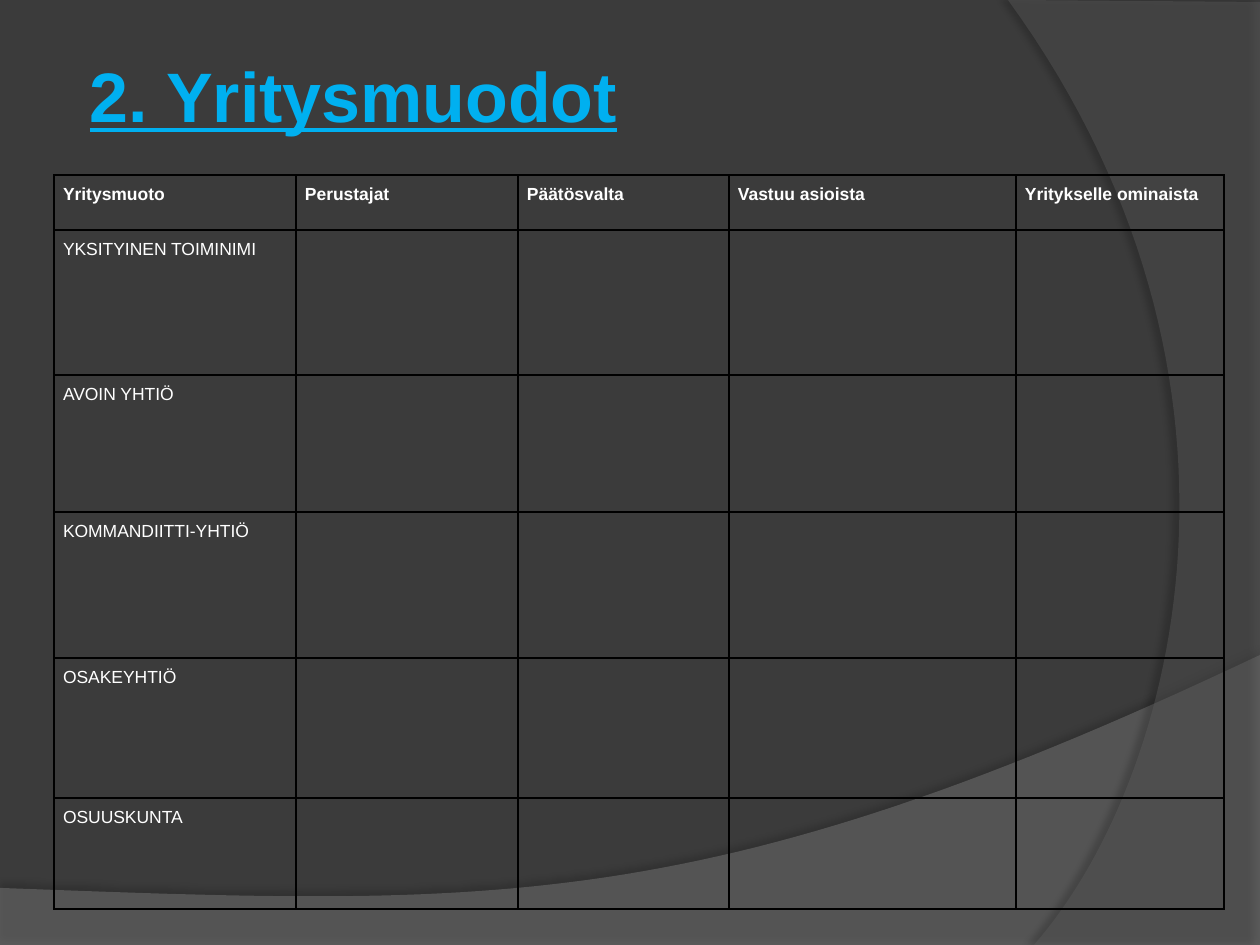
from lxml.etree import SubElement
from pptx import Presentation
from pptx.dml.color import RGBColor
from pptx.enum.text import MSO_ANCHOR
from pptx.oxml.ns import qn
from pptx.util import Emu, Pt

# Content
TITLE = "2. Yritysmuodot"
HEADERS = ["Yritysmuoto", "Perustajat", "Päätösvalta", "Vastuu asioista",
           "Yritykselle ominaista"]
COMPANY_FORMS = ["YKSITYINEN TOIMINIMI", "AVOIN YHTIÖ", "KOMMANDIITTI-YHTIÖ",
                 "OSAKEYHTIÖ", "OSUUSKUNTA"]

# Layout in px
SLIDE = (1260, 945)
TITLE_BOX = (84, 16, 1071, 157)
TITLE_INSET = 6
TABLE_AT = (54, 175)
COLS = [242, 222, 211, 287, 208]
ROWS = [55, 145, 137, 146, 140, 111]
CELL_INSET = 9

# Background waves: straight corners, then one Bezier curve from the last corner
WAVES = [
    dict(corners=[(0, 888), (0, 946), (1260, 946), (1260, 655)],
         curve=[(704, 919), (493, 906), (0, 888)],
         fill="wave_low", alpha=45, shadow=(35, 4, 3.5, 270)),
    dict(corners=[(1260, 2), (1260, 945), (1034, 945)],
         curve=[(1178, 780), (1283, 378), (1008, 0)],
         fill="wave_right", alpha=40, shadow=(45, 4, 4, 180)),
]

THEME = dict(font="Arial", title_size=40, cell_size=10, border_pt=1,
             background="3B3B3B", wave_low="7F7F7F", wave_right="5E5E5E",
             title="00B0F0", text="FFFFFF", line="000000")


def px(n):
    return Emu(round(n * 914400 / 126))


def color(name):
    return RGBColor.from_string(THEME[name])


def style(p, size, name, bold, underline=None):
    f = p.runs[0].font
    f.name, f.size, f.bold, f.underline = THEME["font"], Pt(THEME[size]), bold, underline
    f.color.rgb = color(name)


def bezier(p0, p1, p2, p3, steps=60):
    for i in range(1, steps + 1):
        t = i / steps
        u = 1 - t
        yield tuple(u**3 * a + 3 * u * u * t * b + 3 * u * t * t * c + t**3 * d
                    for a, b, c, d in zip(p0, p1, p2, p3))


def add_alpha(clr, percent):
    SubElement(clr, qn("a:alpha"), val=str(percent * 1000))


def add_wave(s, wave):
    corners = wave["corners"]
    points = corners + list(bezier(corners[-1], *wave["curve"]))
    points = [(px(x), px(y)) for x, y in points]
    builder = s.shapes.build_freeform(*points[0])
    builder.add_line_segments(points[1:], close=True)
    sp = builder.convert_to_shape()
    sp.fill.solid()
    sp.fill.fore_color.rgb = color(wave["fill"])
    sp.line.fill.background()
    sp.shadow.inherit = False
    sp_pr = sp._element.spPr
    add_alpha(sp_pr.find(qn("a:solidFill"))[0], wave["alpha"])
    alpha, blur, dist, angle = wave["shadow"]
    shadow = SubElement(sp_pr.find(qn("a:effectLst")), qn("a:outerShdw"),
                        blurRad=str(Pt(blur)), dist=str(Pt(dist)),
                        dir=str(angle * 60000), algn="ctr", rotWithShape="0")
    add_alpha(SubElement(shadow, qn("a:srgbClr"), val=THEME["line"]), alpha)


def format_cell(cell):
    cell.margin_left = cell.margin_right = px(CELL_INSET)
    cell.margin_top = cell.margin_bottom = 0
    tc_pr = cell._tc.get_or_add_tcPr()
    for side in ("lnL", "lnR", "lnT", "lnB"):
        ln = SubElement(tc_pr, qn(f"a:{side}"), w=str(Pt(THEME["border_pt"])))
        SubElement(SubElement(ln, qn("a:solidFill")), qn("a:srgbClr"), val=THEME["line"])
    cell.fill.background()


def main():
    prs = Presentation()
    prs.slide_width, prs.slide_height = map(px, SLIDE)
    s = prs.slides.add_slide(prs.slide_layouts[6])

    # Background
    s.background.fill.solid()
    s.background.fill.fore_color.rgb = color("background")
    for wave in WAVES:
        add_wave(s, wave)

    # Title
    tf = s.shapes.add_textbox(*map(px, TITLE_BOX)).text_frame
    tf.word_wrap = True
    tf.vertical_anchor = MSO_ANCHOR.MIDDLE
    tf.margin_left = tf.margin_right = tf.margin_top = tf.margin_bottom = px(TITLE_INSET)
    tf.text = TITLE
    style(tf.paragraphs[0], "title_size", "title", True, True)

    # Table
    size = (sum(COLS), sum(ROWS))
    table = s.shapes.add_table(len(ROWS), len(COLS),
                               *map(px, TABLE_AT + size)).table
    table.horz_banding = False
    for col, width in zip(table.columns, COLS):
        col.width = px(width)
    for row, height in zip(table.rows, ROWS):
        row.height = px(height)
    for cell in table.iter_cells():
        format_cell(cell)

    rows = [HEADERS] + [[form] for form in COMPANY_FORMS]
    for i, texts in enumerate(rows):
        for j, text in enumerate(texts):
            p = table.cell(i, j).text_frame.paragraphs[0]
            p.text = text
            p.line_spacing = 1.5
            style(p, "cell_size", "text", i == 0)

    prs.save("out.pptx")


if __name__ == "__main__":
    main()
